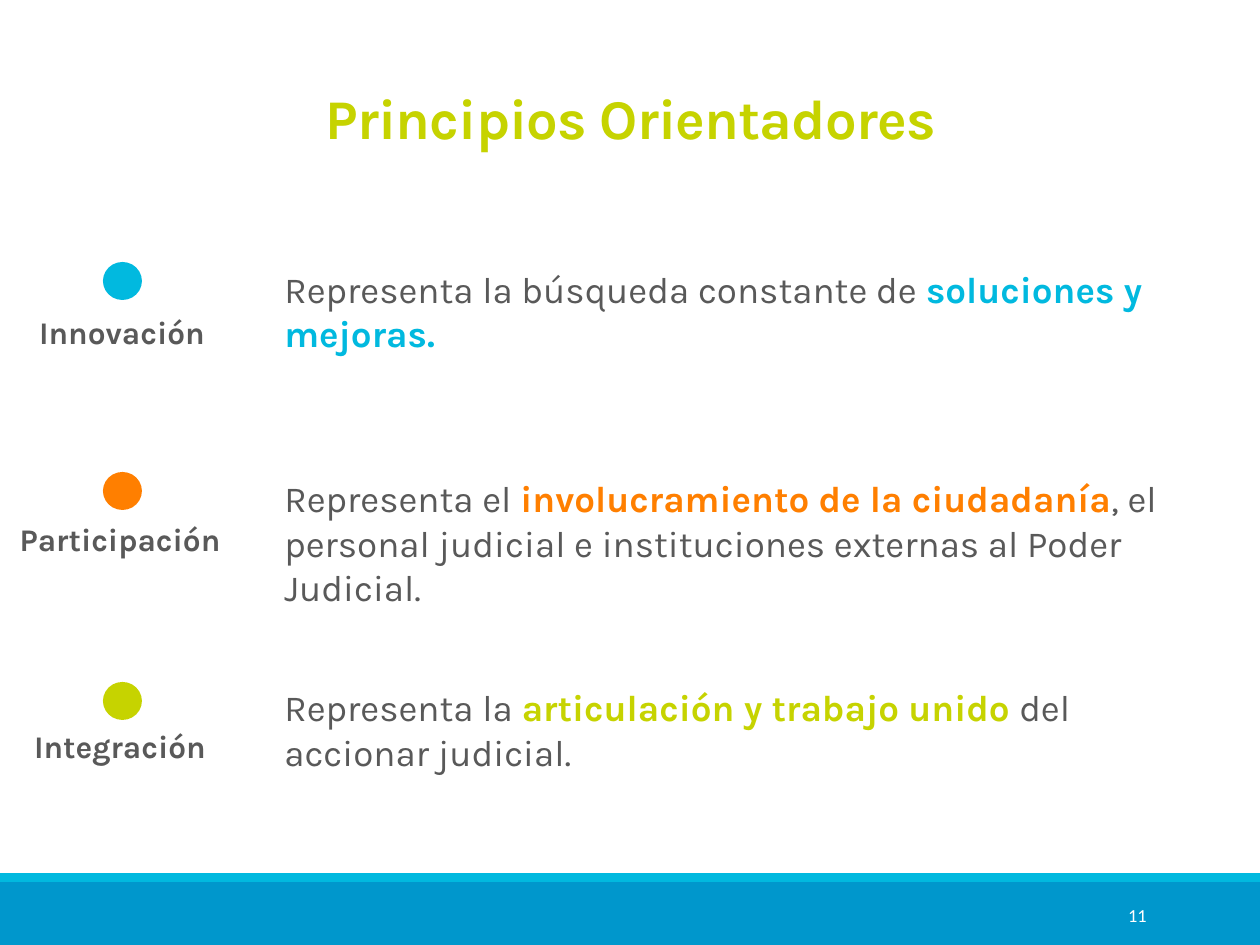
"""Build the slide of guiding principles: three dots with labels and descriptions."""
from dataclasses import dataclass

from pptx import Presentation
from pptx.dml.color import RGBColor
from pptx.enum.shapes import MSO_SHAPE
from pptx.enum.text import MSO_ANCHOR, PP_ALIGN
from pptx.util import Emu, Pt

RECTANGLE, OVAL, ROUNDED = MSO_SHAPE.RECTANGLE, MSO_SHAPE.OVAL, MSO_SHAPE.ROUNDED_RECTANGLE
LEFT, CENTER, RIGHT = PP_ALIGN.LEFT, PP_ALIGN.CENTER, PP_ALIGN.RIGHT
TOP, MIDDLE = MSO_ANCHOR.TOP, MSO_ANCHOR.MIDDLE
EMU_PER_PX = 914400 / 126


@dataclass(frozen=True)
class Theme:
    cyan: str = "01B9DF"
    orange: str = "FF7F00"
    lime: str = "C6D300"
    blue: str = "0097CC"
    grey: str = "595959"
    white: str = "FFFFFF"
    font: str = "Karla"
    number_font: str = "Calibri"
    title_size: float = 32
    body_size: float = 21
    label_size: float = 18
    number_size: float = 10.5


THEME = Theme()
TITLE = "Principios Orientadores"
PAGE_NUMBER = "11"
PRINCIPLES = [
    ("Innovación", THEME.cyan, 0,
     ("Representa la búsqueda constante de ", "soluciones y mejoras.", "")),
    ("Participación", THEME.orange, -2,
     ("Representa el ", "involucramiento de la ciudadanía",
      ", el personal judicial e instituciones externas al Poder Judicial.")),
    ("Integración", THEME.lime, -2,
     ("Representa la ", "articulación y trabajo unido ", "del accionar judicial.")),
]
BARS = [((0, 882, 1260, 63), THEME.blue), ((0, 873, 1260, 9), THEME.cyan)]
DOT_TOP, DOT_PITCH = 262, 210
LABEL_TOP, LABEL_PITCH = 302, 207
DESCRIPTION_TOP, DESCRIPTION_PITCH = 261, 209


def px(length):
    return Emu(round(length * EMU_PER_PX))


def add_shape(slide, preset, box, color=None):
    shape = slide.shapes.add_shape(preset, *map(px, box))
    shape.shadow.inherit = False
    shape.line.fill.background()
    if color:
        shape.fill.solid()
        shape.fill.fore_color.rgb = RGBColor.from_string(color)
    else:
        shape.fill.background()
    return shape


def write(shape, pieces, size, align=LEFT, anchor=TOP, font=THEME.font):
    frame = shape.text_frame
    frame.word_wrap = True
    frame.vertical_anchor = anchor
    paragraph = frame.paragraphs[0]
    paragraph.alignment = align
    for text, color, bold in pieces:
        run = paragraph.add_run()
        run.text = text
        for name, value in {"name": font, "size": Pt(size), "bold": bold}.items():
            setattr(run.font, name, value)
        run.font.color.rgb = RGBColor.from_string(color)
    return paragraph


def add_text(slide, box, pieces, size, **layout):
    return write(slide.shapes.add_textbox(*map(px, box)), pieces, size, **layout)


def add_principle(slide, row, label, color, label_left, description):
    add_shape(slide, OVAL, (103, DOT_TOP + row * DOT_PITCH, 39, 38), color)
    label_box = (label_left, LABEL_TOP + row * LABEL_PITCH, 244, 60)
    write(add_shape(slide, ROUNDED, label_box), [(label, THEME.grey, True)],
          THEME.label_size, CENTER, MIDDLE)
    before, emphasis, after = description
    pieces = [(before, THEME.grey, False), (emphasis, color, True), (after, THEME.grey, False)]
    add_text(slide, (272, DESCRIPTION_TOP + row * DESCRIPTION_PITCH, 945, 102),
             [piece for piece in pieces if piece[0]], THEME.body_size)


def main():
    deck = Presentation()
    deck.slide_width, deck.slide_height = px(1260), px(945)
    slide = deck.slides.add_slide(deck.slide_layouts[6])
    for box, color in BARS:
        add_shape(slide, RECTANGLE, box, color)
    add_text(slide, (1023, 890, 136, 50), [(PAGE_NUMBER, THEME.white, False)],
             THEME.number_size, align=RIGHT, anchor=MIDDLE, font=THEME.number_font)
    title = add_text(slide, (214, 77, 833, 81), [(TITLE, THEME.lime, True)],
                     THEME.title_size, align=CENTER)
    title.runs[0].font._element.set("spc", "-50")
    for row, principle in enumerate(PRINCIPLES):
        add_principle(slide, row, *principle)
    deck.save("out.pptx")


if __name__ == "__main__":
    main()
